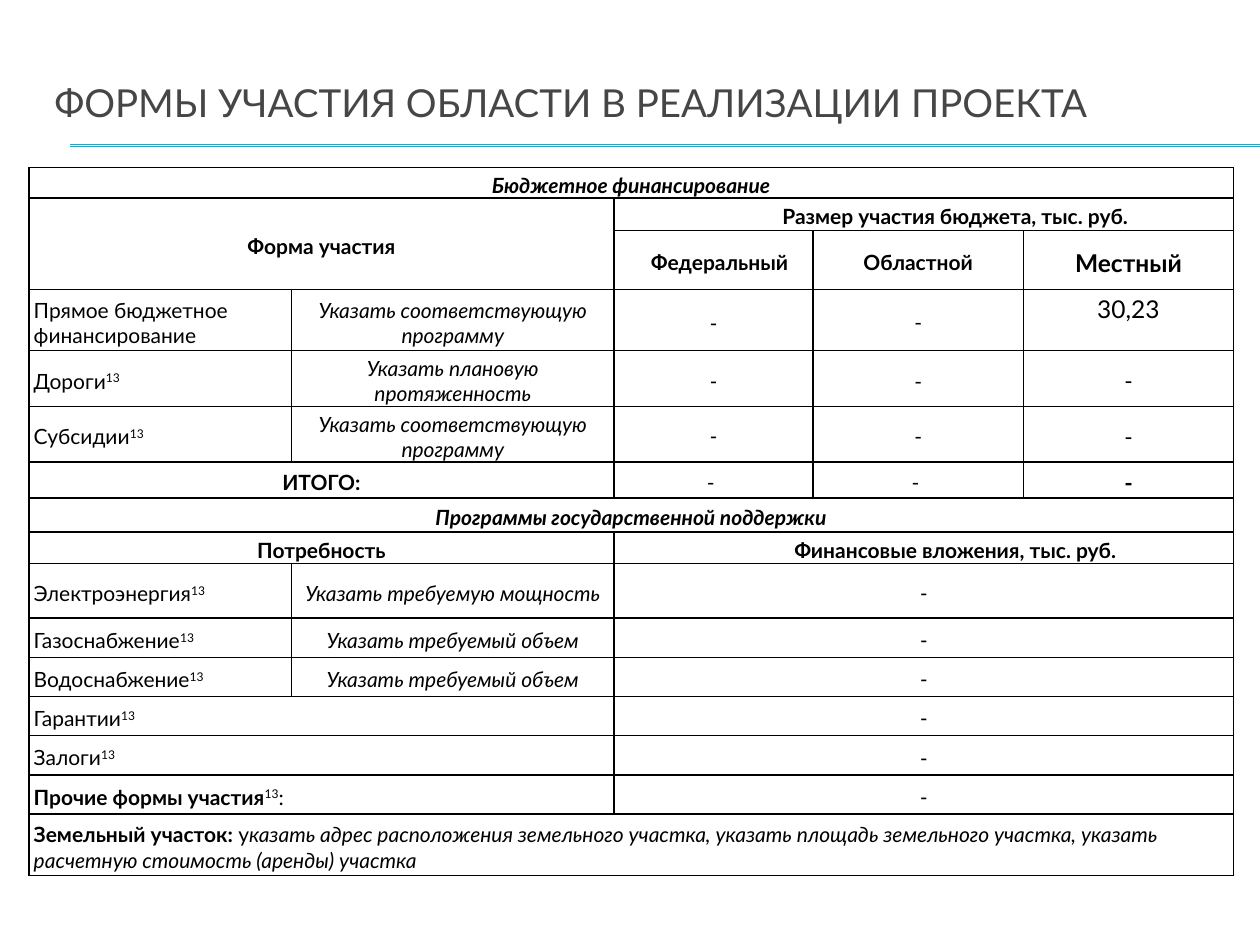
from lxml.etree import SubElement
from pptx import Presentation
from pptx.dml.color import RGBColor
from pptx.enum.shapes import MSO_CONNECTOR
from pptx.enum.text import MSO_ANCHOR, PP_ALIGN
from pptx.oxml.ns import qn
from pptx.util import Cm, Pt


def color(code):
    return RGBColor.from_string(code)


def write(para, text, size, style="", font="Lato", tint="000000"):
    run = para.add_run()
    run.text = text
    run.font.name = font
    run.font.size = Pt(size)
    run.font.bold = "b" in style
    run.font.italic = "i" in style
    run.font.color.rgb = color(tint)
    if "s" in style:
        run.font._element.set("baseline", "30000")


deck = Presentation()
deck.slide_width = Cm(25.4)
deck.slide_height = Cm(19.05)
slide = deck.slides.add_slide(deck.slide_layouts[5])

for y in (2.92, 2.95):
    rule = slide.shapes.add_connector(MSO_CONNECTOR.STRAIGHT, Cm(1.42), Cm(y), Cm(25.4), Cm(y))
    rule.line.color.rgb = color("2DA2BF")
    rule.line.width = Pt(0.75)
    SubElement(rule._element.spPr, qn("a:effectLst"))

title = slide.shapes.title
title.left, title.top, title.width, title.height = Cm(0.84), Cm(0.89), Cm(24.13), Cm(2.34)
title.text_frame.word_wrap = True
title.text_frame.vertical_anchor = MSO_ANCHOR.MIDDLE
head = title.text_frame.paragraphs[0]
head.alignment = PP_ALIGN.LEFT
write(head, "ФОРМЫ УЧАСТИЯ ОБЛАСТИ В РЕАЛИЗАЦИИ ПРОЕКТА", 22, tint="464646")

widths = [5.3, 6.5, 4.01, 4.24, 4.24]
heights = [0.61, 0.66, 1.19, 1.23, 1.12, 1.12, 0.73, 0.68, 0.64, 1.1] + [0.79] * 5 + [1.24]
frame = slide.shapes.add_table(len(heights), len(widths), Cm(0.58), Cm(3.38),
                               Cm(sum(widths)), Cm(sum(heights)))
table = frame.table
table.first_row = False
table.horz_banding = False
for col, width in zip(table.columns, widths):
    col.width = Cm(width)
for row, height in zip(table.rows, heights):
    row.height = Cm(height)

for cell in table.iter_cells():
    props = cell._tc.get_or_add_tcPr()
    for side in ("a:lnL", "a:lnR", "a:lnT", "a:lnB"):
        edge = SubElement(props, qn(side), w=str(Pt(1)))
        paint = SubElement(edge, qn("a:solidFill"))
        SubElement(paint, qn("a:srgbClr"), val="000000")
    cell.fill.background()
    cell.vertical_anchor = MSO_ANCHOR.MIDDLE
    cell.margin_left = cell.margin_right = cell.margin_top = Cm(0.1)
    cell.margin_bottom = 0

spans = [(0, 0, 0, 4), (1, 0, 2, 1), (1, 2, 1, 4), (6, 0, 6, 1), (7, 0, 7, 4),
         (8, 0, 8, 1), (15, 0, 15, 4)]
spans += [(r, 2, r, 4) for r in range(8, 15)]
spans += [(r, 0, r, 1) for r in range(12, 15)]
for top, left, low, right in spans:
    table.cell(top, left).merge(table.cell(low, right))

heads = [
    (0, 0, "Бюджетное финансирование", 12, "bi"),
    (1, 0, "Форма участия", 12, "b"),
    (1, 2, "Размер участия бюджета, тыс. руб.", 12, "b"),
    (2, 2, "Федеральный", 12, "b"),
    (2, 3, "Областной", 12, "b"),
    (2, 4, "Местный", 14, "b"),
    (3, 4, "30,23", 14, ""),
    (4, 4, "-", 13, ""),
    (5, 4, "-", 13, ""),
    (6, 0, "ИТОГО:", 12, "b"),
    (6, 2, "- ", 12, ""),
    (6, 3, "- ", 12, ""),
    (6, 4, "-", 13, "b"),
    (7, 0, "Программы государственной поддержки", 12, "bi"),
    (8, 0, "Потребность", 12, "b"),
    (8, 2, "Финансовые вложения, тыс. руб.", 12, "b"),
    (3, 1, "Указать соответствующую программу", 12, "i"),
    (4, 1, "Указать плановую протяженность", 12, "i"),
    (5, 1, "Указать соответствующую программу", 12, "i"),
    (9, 1, "Указать требуемую мощность", 12, "i"),
    (10, 1, "Указать требуемый объем", 12, "i"),
    (11, 1, "Указать требуемый объем", 12, "i"),
]
for r, c, text, size, style in heads:
    para = table.cell(r, c).text_frame.paragraphs[0]
    para.alignment = PP_ALIGN.CENTER
    write(para, text, size, style)
table.cell(3, 4).vertical_anchor = MSO_ANCHOR.TOP

for r, c, indent in ((1, 2, 1.27), (2, 2, 0.64), (8, 2, 1.27)):
    para = table.cell(r, c).text_frame.paragraphs[0]
    para._p.get_or_add_pPr().set("marL", str(Cm(indent)))
table.cell(2, 2).text_frame.paragraphs[0].alignment = PP_ALIGN.LEFT

dashes = [(r, 2, "Arial") for r in (3, 4, 5, *range(9, 15))]
dashes += [(r, 3, "Lato") for r in (3, 4, 5)]
for r, c, font in dashes:
    para = table.cell(r, c).text_frame.paragraphs[0]
    para.alignment = PP_ALIGN.CENTER
    write(para, "-", 12, font=font)

note = ("13", "s")
names = {
    3: [("Прямое бюджетное финансирование", "")],
    4: [("Дороги", ""), note],
    5: [("Субсидии", ""), note],
    9: [("Электроэнергия", ""), note],
    10: [("Газоснабжение", ""), note],
    11: [("Водоснабжение", ""), note],
    12: [("Гарантии", ""), note],
    13: [("Залоги", ""), note],
    14: [("Прочие формы участия", "b"), note, (":", "")],
    15: [("Земельный участок: ", "b"), ("у", ""),
         ("казать адрес расположения земельного участка, указать площадь земельного "
          "участка, указать расчетную стоимость (аренды) участка", "i")],
}
for r, runs in names.items():
    para = table.cell(r, 0).text_frame.paragraphs[0]
    para.alignment = PP_ALIGN.LEFT
    for text, style in runs:
        write(para, text, 12, style)

deck.save("out.pptx")
